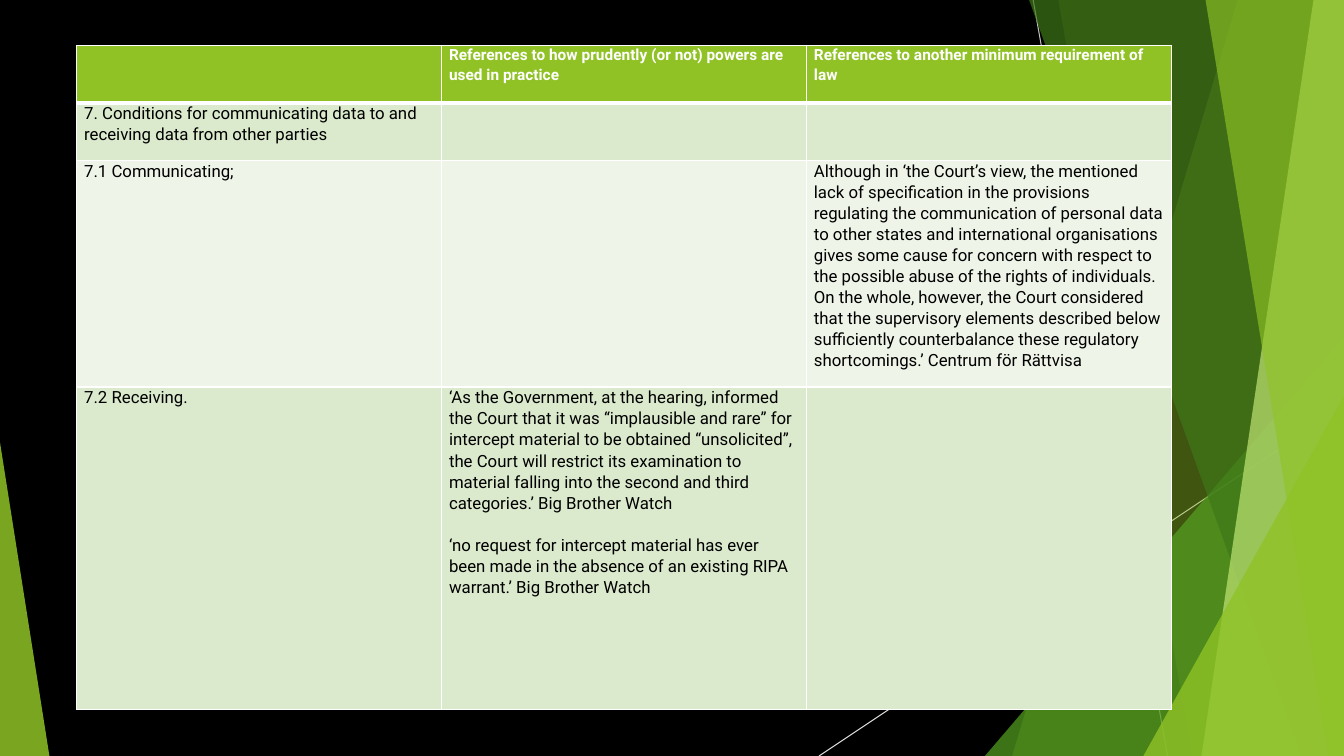
from lxml import etree
from pptx import Presentation
from pptx.dml.color import RGBColor
from pptx.enum.shapes import MSO_CONNECTOR, MSO_SHAPE
from pptx.oxml.ns import qn
from pptx.util import Pt

STRAIGHT = MSO_CONNECTOR.STRAIGHT
TRIANGLE = MSO_SHAPE.ISOSCELES_TRIANGLE

FONT = "Roboto"
WHITE, BLACK = "FFFFFF", "000000"
LIME, GREEN, DARK_GREEN, PALE_LIME = "90C226", "54A021", "3F7819", "C0E474"
DARK_BAND, LIGHT_BAND = "DBE9CD", "EEF4E8"

SLIDE_WIDTH, SLIDE_HEIGHT = 960, 540
ROW_HEIGHTS = [41, 41, 162, 230.4]
HEADER_RULE, GRID_RULE = 3, 1

# Each cell is a list of paragraphs
ROWS = [
    [[],
     ["References to how prudently (or not) powers are used in practice"],
     ["References to another minimum requirement of law"]],
    [["7. Conditions for communicating data to and receiving data from other parties"],
     [], []],
    [["7.1 Communicating;"],
     [],
     ["Although in ‘the Court’s view, the mentioned lack of specification in the "
      "provisions regulating the communication of personal data to other states and "
      "international organisations gives some cause for concern with respect to the "
      "possible abuse of the rights of individuals. On the whole, however, the Court "
      "considered that the supervisory elements described below sufficiently "
      "counterbalance these regulatory shortcomings.’ Centrum för Rättvisa"]],
    [["7.2 Receiving."],
     ["‘As the Government, at the hearing, informed the Court that it was “implausible "
      "and rare” for intercept material to be obtained “unsolicited”, the Court will "
      "restrict its examination to material falling into the second and third "
      "categories.’ Big Brother Watch",
      "‘no request for intercept material has ever been made in the absence of an "
      "existing RIPA warrant.’ Big Brother Watch"],
     []],
]


def colour(hex_string):
    return RGBColor.from_string(hex_string)


def paint(shape, fill, opacity):
    """Give a shape a translucent fill, no outline and no shadow."""
    shape.shadow.inherit = False
    shape.line.fill.background()
    shape.fill.solid()
    shape.fill.fore_color.rgb = colour(fill)
    fill_colour = shape.fill._xPr.find(qn("a:solidFill"))[0]
    etree.SubElement(fill_colour, qn("a:alpha"), val=str(opacity * 1000))


def add_line(slide, start, end, line_colour):
    line = slide.shapes.add_connector(STRAIGHT, *map(Pt, start + end))
    line.line.color.rgb = colour(line_colour)
    line.line.width = Pt(0.75)
    etree.SubElement(line._element.spPr, qn("a:effectLst"))


def add_facet(slide, corners, fill, opacity):
    points = [(Pt(x), Pt(y)) for x, y in corners]
    builder = slide.shapes.build_freeform(*points[0])
    builder.add_line_segments(points[1:], close=True)
    paint(builder.convert_to_shape(), fill, opacity)


def add_triangle(slide, left, top, width, height, apex, fill, opacity):
    triangle = slide.shapes.add_shape(TRIANGLE, *map(Pt, (left, top, width, height)))
    triangle.adjustments[0] = apex
    paint(triangle, fill, opacity)


def add_right_facets(slide, left, top, width, height):
    right, bottom = left + width, top + height
    add_line(slide, (left + 153, top), (left + 249, bottom), "BFBFBF")
    add_line(slide, (right, top + 290), (left, bottom), "D9D9D9")

    def band(top_offset, bottom_offset, fill, opacity):
        corners = [(left + top_offset, top), (right, top),
                   (right, bottom), (left + bottom_offset, bottom)]
        add_facet(slide, corners, fill, opacity)

    def wedge(wedge_width, wedge_height, fill, opacity):
        add_triangle(slide, right - wedge_width, bottom - wedge_height,
                     wedge_width, wedge_height, 1, fill, opacity)

    band(299.2, 138, LIME, 30)
    band(171, 266.8, LIME, 20)
    wedge(256.5, 300, GREEN, 72)
    band(150.1, 344.5, DARK_GREEN, 70)
    band(353.2, 273.2, PALE_LIME, 70)
    band(276.1, 364, LIME, 65)
    wedge(143.3, 257, LIME, 80)


def add_borders(cell, top, bottom):
    """Draw white cell borders; they must precede the fill in the XML."""
    properties = cell._tc.get_or_add_tcPr()
    widths = {"a:lnL": GRID_RULE, "a:lnR": GRID_RULE, "a:lnT": top, "a:lnB": bottom}
    for index, (tag, width) in enumerate(widths.items()):
        border = etree.Element(qn(tag), w=str(Pt(width)))
        fill = etree.SubElement(border, qn("a:solidFill"))
        etree.SubElement(fill, qn("a:srgbClr"), val=WHITE)
        properties.insert(index, border)


def write_cell(cell, paragraphs, is_header):
    cell.margin_left = cell.margin_right = Pt(5.4)
    cell.margin_top = cell.margin_bottom = 0
    for index, text in enumerate(paragraphs):
        frame = cell.text_frame
        paragraph = frame.add_paragraph() if index else frame.paragraphs[0]
        paragraph.text = text
        paragraph.line_spacing = 1.07
        if index:
            paragraph.space_before = Pt(15)
        paragraph.font.name = FONT
        paragraph.font.size = Pt(11 if is_header else 12)
        paragraph.font.bold = is_header
        paragraph.font.color.rgb = colour(WHITE if is_header else BLACK)


def add_requirements_table(slide, left, top, width):
    columns = len(ROWS[0])
    frame = slide.shapes.add_table(len(ROWS), columns, Pt(left), Pt(top),
                                   Pt(width), Pt(sum(ROW_HEIGHTS)))
    table = frame.table
    for column in table.columns:
        column.width = Pt(width / columns)
    for row_index, contents in enumerate(ROWS):
        table.rows[row_index].height = Pt(ROW_HEIGHTS[row_index])
        is_header = row_index == 0
        band = LIME if is_header else DARK_BAND if row_index % 2 else LIGHT_BAND
        for column_index, paragraphs in enumerate(contents):
            cell = table.cell(row_index, column_index)
            cell.fill.solid()
            cell.fill.fore_color.rgb = colour(band)
            add_borders(cell,
                        HEADER_RULE if row_index == 1 else GRID_RULE,
                        HEADER_RULE if is_header else GRID_RULE)
            write_cell(cell, paragraphs, is_header)


def main():
    presentation = Presentation()
    presentation.slide_width = Pt(SLIDE_WIDTH)
    presentation.slide_height = Pt(SLIDE_HEIGHT)
    slide = presentation.slides.add_slide(presentation.slide_layouts[6])
    slide.background.fill.solid()
    slide.background.fill.fore_color.rgb = colour(BLACK)

    # Decoration at both edges
    add_right_facets(slide, 585, 0, 375, SLIDE_HEIGHT)
    add_triangle(slide, 0, 316, 35.3, 224, 0, LIME, 85)

    # Table of legal requirements
    add_requirements_table(slide, 54.7, 32.4, 782)
    presentation.save("out.pptx")


if __name__ == "__main__":
    main()
